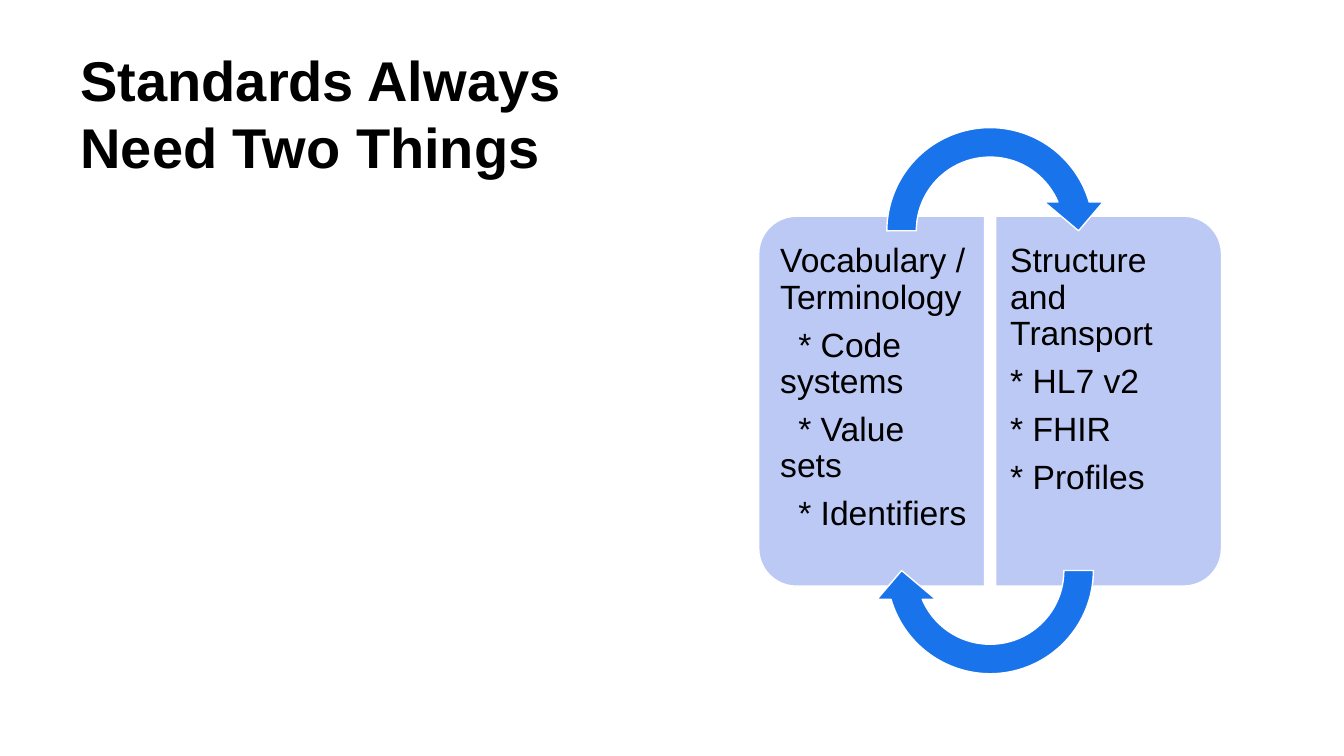
from pptx import Presentation
from pptx.dml.color import RGBColor
from pptx.enum.shapes import MSO_SHAPE
from pptx.enum.text import MSO_ANCHOR, PP_ALIGN
from pptx.util import Inches, Pt

PANEL = MSO_SHAPE.ROUND_2_SAME_RECTANGLE
ARROW = MSO_SHAPE.CIRCULAR_ARROW
TOP = MSO_ANCHOR.TOP
LEFT = PP_ALIGN.LEFT

TITLE = "Standards Always Need Two Things"
PANELS = [
    {"left": 6.81, "turn": 270, "text_left": 7.64, "insets": (0.1, 0.17, 0.15, 0.17),
     "indent": 0.18, "heading": "Vocabulary / Terminology",
     "items": ["* Code systems", "* Value sets", "* Identifiers"]},
    {"left": 9.16, "turn": 90, "text_left": 9.87, "insets": (0.15, 0.17, 0.1, 0.17),
     "indent": 0, "heading": "Structure and Transport",
     "items": ["* HL7 v2", "* FHIR", "* Profiles"]},
]
ARROWS = [(1.12, 0), (4.49, 180)]
PANEL_ADJUST = (0.167, 0)
ARROW_ADJUST = (0.125, 11.423, 204.577, 108, 0.125)


def color(value):
    return RGBColor.from_string(value)


def add_text(page, lines, place, size, bold=False, insets=(0.1, 0.05, 0.1, 0.05),
             spacing=1.0, after=0, indent=0):
    box = page.shapes.add_textbox(*map(Inches, place))
    frame = box.text_frame
    frame.word_wrap = True
    frame.vertical_anchor = TOP
    (frame.margin_left, frame.margin_top,
     frame.margin_right, frame.margin_bottom) = map(Inches, insets)
    for index, line in enumerate(lines):
        para = frame.add_paragraph() if index else frame.paragraphs[0]
        para.alignment = LEFT
        para.line_spacing = spacing
        para.space_after = Pt(after)
        if index and indent:
            properties = para._p.get_or_add_pPr()
            properties.set("marL", "0")
            properties.set("indent", str(Inches(indent)))
        span = para.add_run()
        span.text = line
        span.font.name = "Arial"
        span.font.size = Pt(size)
        span.font.bold = bold
        span.font.color.rgb = color("000000")


def add_part(page, kind, place, turn, fill, adjust):
    shape = page.shapes.add_shape(kind, *map(Inches, place))
    shape.rotation = turn
    shape.shadow.inherit = False
    for index, value in enumerate(adjust):
        shape.adjustments[index] = value
    shape.fill.solid()
    shape.fill.fore_color.rgb = color(fill)
    shape.line.color.rgb = color("FFFFFF")
    shape.line.width = Pt(1)


def main():
    deck = Presentation()
    deck.slide_width, deck.slide_height = Inches(13.33), Inches(7.5)
    page = deck.slides.add_slide(deck.slide_layouts[6])
    add_text(page, [TITLE], (0.7, 0.4, 5.08, 2.24), 40, bold=True)
    for panel in PANELS:
        add_part(page, PANEL, (panel["left"], 2.86, 3.67, 2.24), panel["turn"],
                 "BDC9F5", PANEL_ADJUST)
        add_text(page, [panel["heading"], *panel["items"]],
                 (panel["text_left"], 2.25, 2.13, 3.45), 24, insets=panel["insets"],
                 spacing=0.9, after=8.4, indent=panel["indent"])
    for top, turn in ARROWS:
        add_part(page, ARROW, (8.65, top, 2.34, 2.34), turn, "1973EB", ARROW_ADJUST)
    deck.save("out.pptx")


if __name__ == "__main__":
    main()
